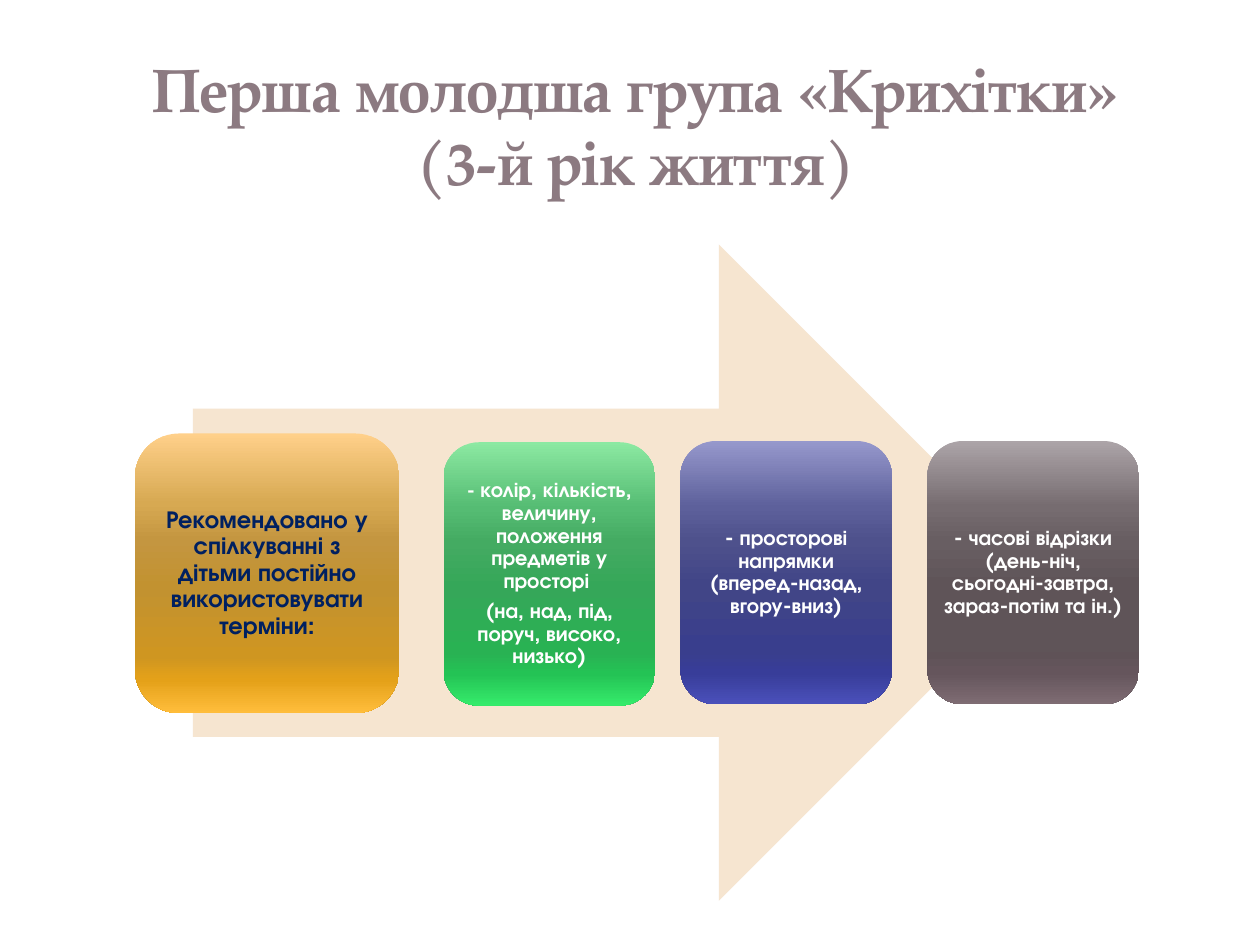
from lxml.etree import SubElement
from pptx import Presentation
from pptx.dml.color import RGBColor
from pptx.enum.shapes import MSO_SHAPE
from pptx.enum.text import MSO_ANCHOR, MSO_AUTO_SIZE, PP_ALIGN
from pptx.oxml.ns import qn
from pptx.util import Inches, Pt

TITLE = "Перша молодша група «Крихітки» (3-й рік життя)"
TITLE_FONT, CARD_FONT = "TeX Gyre Pagella", "TeX Gyre Adventor"
STOPS = (0, 25, 38, 55, 80, 88, 100)  # percent of the card height

# left, top, width, height, inset, text size, text colour, gradient, paragraphs
CARDS = [
    (1.07, 3.44, 2.1, 2.22, 0.06, 14, "002060",
     "FFD08A D7A952 C49640 C29230 CF9621 E4A119 FFBD3B",
     ["Рекомендовано у спілкуванні з дітьми постійно використовувати терміни:"]),
    (3.52, 3.51, 1.68, 2.09, 0.05, 12, "FFFFFF",
     "8CE9A2 55BC73 44AB62 35A759 29B253 24C355 35EB6B",
     ["- колір, кількість, величину, положення предметів у просторі ",
      "(на, над, під, поруч, високо, низько)"]),
    (5.4, 3.5, 1.68, 2.09, 0.05, 12, "FFFFFF",
     "9698CC 5D609B 4E518C 414587 393E8D 383D99 4A50BA",
     ["- просторові напрямки (вперед-назад, вгору-вниз)"]),
    (7.36, 3.5, 1.68, 2.09, 0.05, 12, "FFFFFF",
     "ACA4A8 766C70 685E62 5F5458 5F5257 65555C 7E6C73",
     ["- часові відрізки (день-ніч, сьогодні-завтра, зараз-потім та ін.)"]),
]


def rgb(color):
    return RGBColor.from_string(color)


def style_span(span, font, size, color):
    span.font.name = font
    span.font.size = Pt(size)
    span.font.bold = True
    span.font.color.rgb = rgb(color)


def add_plain_shape(slide, kind, *place):
    """Add a preset shape without outline or shadow."""
    shape = slide.shapes.add_shape(kind, *map(Inches, place))
    shape.shadow.inherit = False
    shape.line.fill.background()
    return shape


def fill_gradient(shape, colors):
    """Fill from top to bottom with one colour at each of STOPS."""
    shape.fill.gradient()
    shape.fill.gradient_angle = 270
    stop_list = shape._element.spPr.find(qn("a:gradFill")).find(qn("a:gsLst"))
    for stop in list(stop_list):
        stop_list.remove(stop)
    for percent, color in zip(STOPS, colors):
        stop = SubElement(stop_list, qn("a:gs"), pos=str(percent * 1000))
        SubElement(stop, qn("a:srgbClr"), val=color)


def add_card(slide, left, top, width, height, inset, size, color, gradient, texts):
    card = add_plain_shape(slide, MSO_SHAPE.ROUNDED_RECTANGLE, left, top, width, height)
    fill_gradient(card, gradient.split())
    frame = card.text_frame
    frame.word_wrap = True
    frame.vertical_anchor = MSO_ANCHOR.MIDDLE
    frame.margin_left = frame.margin_right = Inches(inset)
    frame.margin_top = frame.margin_bottom = Inches(inset)
    frame.text = "\n".join(texts)
    for para in frame.paragraphs:
        para.alignment = PP_ALIGN.CENTER
        para.line_spacing = 0.9
        para.space_after = Pt(size * 0.35)
        style_span(para.runs[0], CARD_FONT, size, color)
    return card


deck = Presentation()
deck.slide_width, deck.slide_height = Inches(10), Inches(7.5)
slide = deck.slides.add_slide(deck.slide_layouts[5])

title = slide.shapes.title
title.left, title.top = Inches(1.03), Inches(-0.19)
title.width, title.height = Inches(8.03), Inches(2.36)
title.text_frame.text = TITLE
title.text_frame.word_wrap = True
title.text_frame.auto_size = MSO_AUTO_SIZE.NONE
title.text_frame.vertical_anchor = MSO_ANCHOR.MIDDLE
title_para = title.text_frame.paragraphs[0]
title_para.alignment = PP_ALIGN.CENTER
style_span(title_para.runs[0], TITLE_FONT, 35, "8C7A81")

arrow = add_plain_shape(slide, MSO_SHAPE.RIGHT_ARROW, 1.53, 1.94, 6.78, 5.21)
arrow.fill.solid()
arrow.fill.fore_color.rgb = rgb("F6E5D0")

cards = [add_card(slide, *card) for card in CARDS]
# The dash of the second card is slightly smaller than its text.
para = cards[1].text_frame.paragraphs[0]
dash = para.runs[0]
rest = para.add_run()
dash.text, rest.text = dash.text[:2], dash.text[2:]
style_span(dash, CARD_FONT, 11, "FFFFFF")
style_span(rest, CARD_FONT, 12, "FFFFFF")

deck.save("out.pptx")
